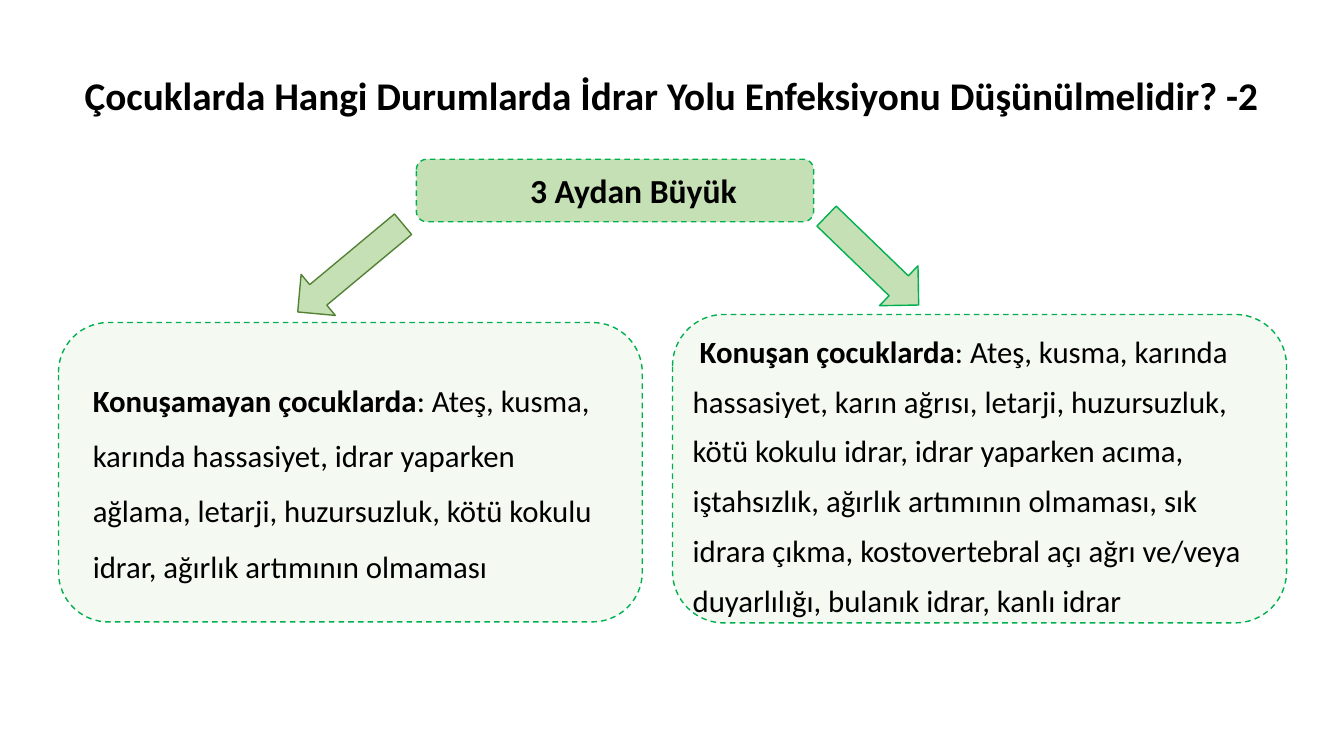
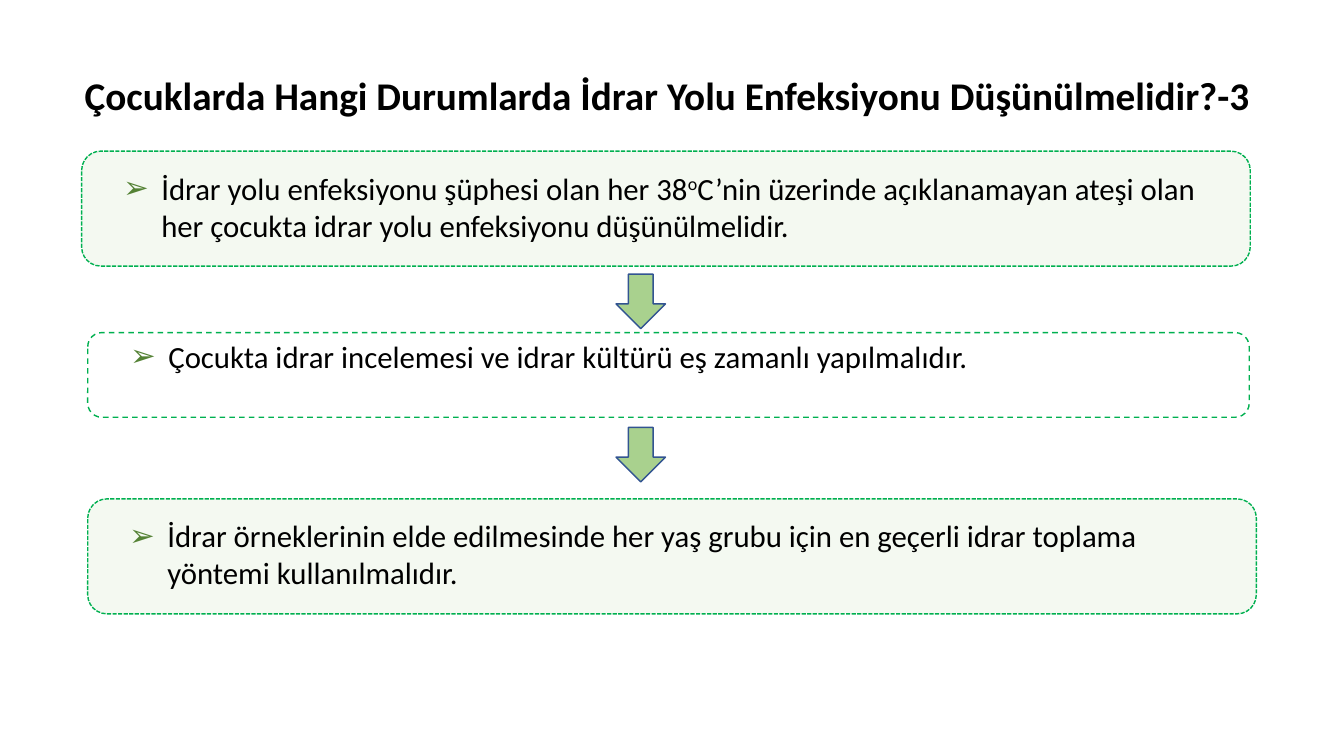
from lxml import etree
from pptx import Presentation, util as u
from pptx.dml.color import RGBColor
from pptx.enum import dml, shapes, text
from pptx.oxml import ns

SCALE = 9144
INK, EDGE, PALE, LEAF, MOSS = "000000", "00B050", "F4F9F1", "C5E0B4", "548235"
DASH, FINE = dml.MSO_LINE.DASH, dml.MSO_LINE.SQUARE_DOT


def px(n):
    """Turn px into EMU."""
    return u.Emu(n * SCALE)


def hue(code):
    """Turn a hex string into a colour."""
    return RGBColor.from_string(code)


def tag(node, name, **attrs):
    """Append a drawing element to a node."""
    return etree.SubElement(node, ns.qn("a:" + name), attrs)


class Deck:
    """Holds the style and the current slide."""

    font = "Calibri"

    def __init__(self):
        """Open a wide deck."""
        self.prs = Presentation()
        self.prs.slide_width, self.prs.slide_height = px(1333), px(750)

    def page(self, title):
        """Start a slide with its title."""
        self.slide = self.prs.slides.add_slide(self.prs.slide_layouts[4])
        head, *self.free = self.slide.placeholders
        self.place(head, (74, 66, 1200, 57))
        self.label(head, [(title, "b")], 28)

    def place(self, shape, box):
        """Move a shape to a box."""
        shape.left, shape.top, shape.width, shape.height = map(px, box)

    def label(self, shape, parts, size, lines=1.0, left=0, first=0, mark=None,
              anchor=text.MSO_ANCHOR.TOP):
        """Fill a shape with one paragraph of plain, bold or raised parts."""
        frame = shape.text_frame
        frame.word_wrap = True
        frame.auto_size = text.MSO_AUTO_SIZE.NONE
        frame.vertical_anchor = anchor
        para = frame.paragraphs[0]
        props = para._p.get_or_add_pPr()
        props.set("marL", str(px(left)))
        props.set("indent", str(px(first)))
        if mark:
            tag(tag(props, "buClr"), "srgbClr", val=MOSS)
            tag(props, "buChar", char=mark)
        else:
            tag(props, "buNone")
        para.alignment = text.PP_ALIGN.LEFT
        para.line_spacing = lines
        para.space_before = u.Pt(0)
        for words, style in parts:
            run = para.add_run()
            run.text = words
            run.font.name, run.font.size = self.font, u.Pt(size)
            run.font.bold = style == "b"
            run.font.color.rgb = hue(INK)
            if style == "up":
                run._r.get_or_add_rPr().set("baseline", "30000")

    def shape(self, kind, box, fill, line):
        """Draw a flat outlined shape."""
        shape = self.slide.shapes.add_shape(kind, *map(px, box))
        shape.shadow.inherit = False
        if fill:
            shape.fill.solid()
            shape.fill.fore_color.rgb = hue(fill)
        else:
            shape.fill.background()
        shape.line.color.rgb = hue(line)
        shape.line.width = u.Pt(1)
        return shape

    def panel(self, box, fill=PALE, dash=DASH):
        """Draw a rounded panel with a dashed edge."""
        shape = self.shape(shapes.MSO_SHAPE.ROUNDED_RECTANGLE, box, fill, EDGE)
        shape.line.dash_style = dash
        return shape

    def arrow(self, box, fill, line, turn=0):
        """Draw a down arrow, turned if asked."""
        self.shape(shapes.MSO_SHAPE.DOWN_ARROW, box, fill, line).rotation = turn

    def body(self, box, parts, **style):
        """Put text into the next body placeholder, in front."""
        shape = self.free.pop(0)
        node = shape._element
        node.getparent().append(node)
        self.place(shape, box)
        self.label(shape, parts, 22, **style)

    def item(self, box, parts):
        """Add one arrow-bulleted item."""
        self.body(box, parts, left=38, first=-38, mark="➢")

    def close(self):
        """Remove the unused placeholders."""
        for shape in self.free:
            node = shape._element
            node.getparent().remove(node)


def signs(deck):
    """Build the slide on children over three months."""
    deck.page("Çocuklarda Hangi Durumlarda İdrar Yolu Enfeksiyonu Düşünülmelidir? -2")
    age = deck.panel((413, 158, 394, 62), LEAF)
    deck.label(age, [("3 Aydan Büyük", "b")], 24, left=100,
               anchor=text.MSO_ANCHOR.MIDDLE)
    deck.panel((58, 320, 579, 297))
    deck.body((82, 355, 524, 232), [
        ("Konuşamayan çocuklarda", "b"),
        (": Ateş, kusma, karında hassasiyet, idrar yaparken ağlama, letarji, "
         "huzursuzluk, kötü kokulu idrar, ağırlık artımının olmaması", "")],
        lines=1.5)
    deck.panel((667, 312, 609, 306))
    deck.body((677, 312, 588, 306), [
        ("Konuşan çocuklarda", "b"),
        (": Ateş, kusma, karında hassasiyet, karın ağrısı, letarji, huzursuzluk, "
         "kötü kokulu idrar, idrar yaparken acıma, iştahsızlık, ağırlık "
         "artımının olmaması, sık idrara çıkma, kostovertebral açı ağrı "
         "ve/veya duyarlılığı, bulanık idrar, kanlı idrar", "")],
        lines=1.35, first=7)
    deck.arrow((321, 198, 53, 136), LEAF, MOSS, 50.2)
    deck.arrow((838, 195, 55, 127), LEAF, EDGE, 314)
    deck.close()


def steps(deck):
    """Build the slide of three steps."""
    deck.page("Çocuklarda Hangi Durumlarda İdrar Yolu Enfeksiyonu Düşünülmelidir?-3")
    deck.panel((81, 150, 1159, 114), dash=FINE)
    deck.item((112, 163, 1097, 84), [
        ("İdrar yolu enfeksiyonu şüphesi olan her 38", ""), ("o", "up"),
        ("C’nin üzerinde açıklanamayan ateşi olan her çocukta idrar yolu "
         "enfeksiyonu düşünülmelidir.", "")])
    deck.panel((87, 330, 1152, 84), None)
    deck.item((119, 330, 1127, 84), [
        ("Çocukta idrar incelemesi ve idrar kültürü eş zamanlı yapılmalıdır.", "")])
    deck.panel((87, 495, 1159, 114), dash=FINE)
    deck.item((118, 508, 1097, 84), [
        ("İdrar örneklerinin elde edilmesinde her yaş grubu için en geçerli "
         "idrar toplama yöntemi kullanılmalıdır.", "")])
    for top in (272, 424):
        deck.arrow((611, top, 49, 54), "A9D18E", "325491")
    deck.close()


def main():
    """Build and save the deck."""
    deck = Deck()
    signs(deck)
    steps(deck)
    deck.prs.save("out.pptx")


if __name__ == "__main__":
    main()
